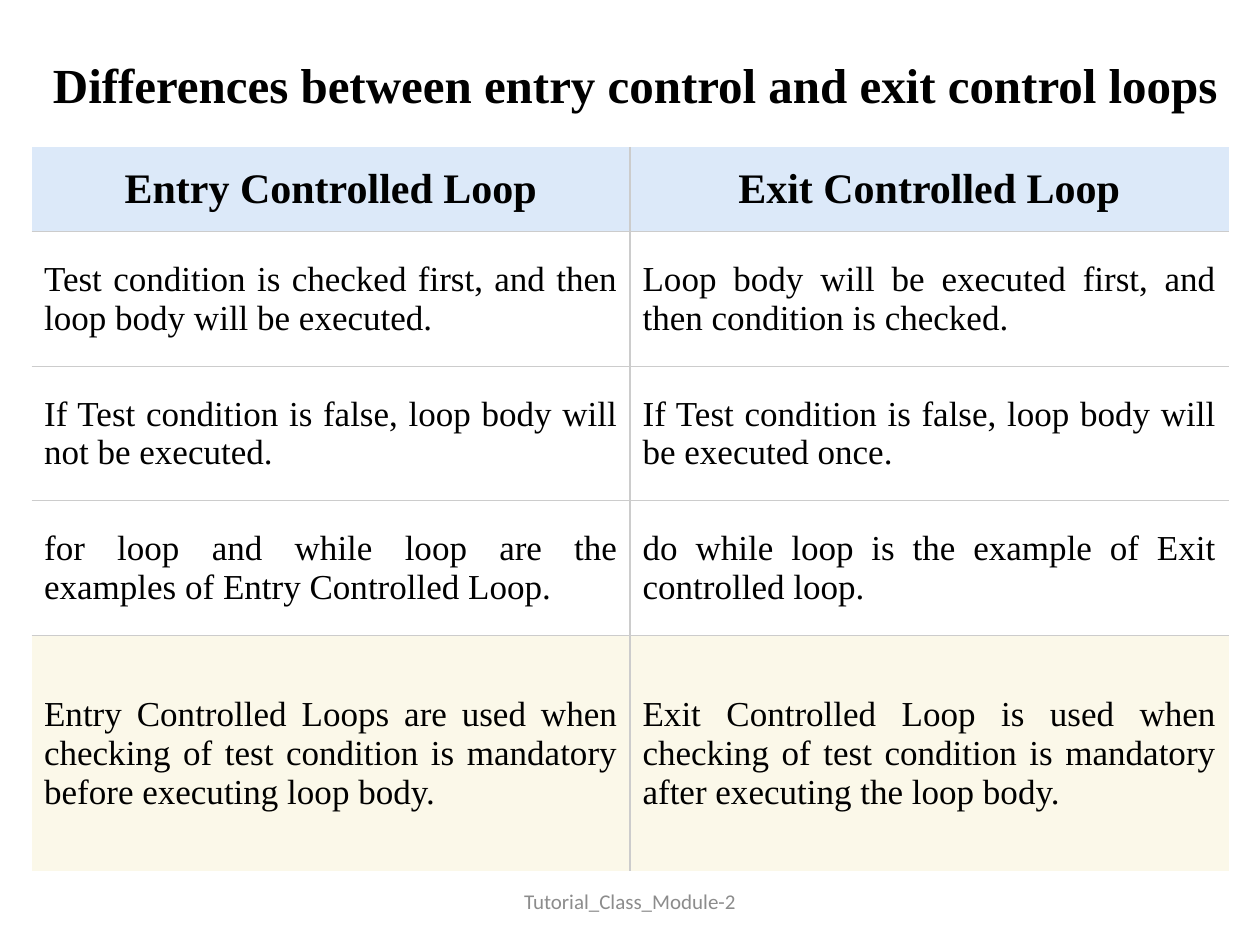
from dataclasses import dataclass

from lxml import etree
from pptx import Presentation
from pptx.dml.color import RGBColor
from pptx.enum.text import MSO_ANCHOR, PP_ALIGN
from pptx.oxml.ns import qn
from pptx.util import Pt

CENTER, JUSTIFY = PP_ALIGN.CENTER, PP_ALIGN.JUSTIFY
MIDDLE = MSO_ANCHOR.MIDDLE


@dataclass(frozen=True)
class Theme:
    ink: str = "000000"
    muted: str = "8C8C8C"
    rule: str = "CCCCCC"
    header_fill: str = "DCE9F9"
    body_fill: str = "FFFFFF"
    closing_fill: str = "FBF8E9"
    serif: str = "Times New Roman"
    sans: str = "Calibri"
    title_size: float = 28
    header_size: float = 24
    body_size: float = 20
    footer_size: float = 12
    rule_width: float = 0.75


@dataclass(frozen=True)
class TextStyle:
    size: float
    font: str
    color: str
    bold: bool = False
    align: PP_ALIGN = CENTER


@dataclass(frozen=True)
class Box:
    left: float
    top: float
    width: float
    height: float

    def lengths(self) -> tuple:
        return Pt(self.left), Pt(self.top), Pt(self.width), Pt(self.height)


@dataclass(frozen=True)
class ComparisonRow:
    entry: str
    exit: str
    height: float
    fill: str
    style: TextStyle


THEME = Theme()
TITLE = TextStyle(THEME.title_size, THEME.serif, THEME.ink, bold=True)
HEADER = TextStyle(THEME.header_size, THEME.serif, THEME.ink, bold=True)
BODY = TextStyle(THEME.body_size, THEME.serif, THEME.ink, align=JUSTIFY)
FOOTER = TextStyle(THEME.footer_size, THEME.sans, THEME.muted)

TABLE_BOX = Box(18, 84, 684, 414)
CELL_MARGIN = 7.2
HEADER_HEIGHT, BODY_HEIGHT, CLOSING_HEIGHT = 48.24, 77.04, 134.64

ROWS = [
    ComparisonRow("Entry Controlled Loop", "Exit Controlled Loop",
                  HEADER_HEIGHT, THEME.header_fill, HEADER),
    ComparisonRow("Test condition is checked first, and then loop body will be executed.",
                  "Loop body will be executed first, and then condition is checked.",
                  BODY_HEIGHT, THEME.body_fill, BODY),
    ComparisonRow("If Test condition is false, loop body will not be executed.",
                  "If Test condition is false, loop body will be executed once.",
                  BODY_HEIGHT, THEME.body_fill, BODY),
    ComparisonRow("for loop and while loop are the examples of Entry Controlled Loop.",
                  "do while loop is the example of Exit controlled loop.",
                  BODY_HEIGHT, THEME.body_fill, BODY),
    ComparisonRow("Entry Controlled Loops are used when checking of test condition "
                  "is mandatory before executing loop body.",
                  "Exit Controlled Loop is used when checking of test condition "
                  "is mandatory after executing the loop body.",
                  CLOSING_HEIGHT, THEME.closing_fill, BODY),
]


def write_text(frame, text: str, style: TextStyle) -> None:
    paragraph = frame.paragraphs[0]
    paragraph.alignment = style.align
    run = paragraph.add_run()
    run.text = text
    font_format = {"size": Pt(style.size), "name": style.font, "bold": style.bold}
    for attribute, value in font_format.items():
        setattr(run.font, attribute, value)
    run.font.color.rgb = RGBColor.from_string(style.color)


def add_label(slide, box: Box, text: str, style: TextStyle) -> None:
    frame = slide.shapes.add_textbox(*box.lengths()).text_frame
    frame.word_wrap = True
    frame.vertical_anchor = MIDDLE
    write_text(frame, text, style)


def set_borders(cell, visible: dict[str, bool]) -> None:
    """Rule the visible sides; call before filling to keep the XML order."""
    properties = cell._tc.get_or_add_tcPr()
    for side, shown in visible.items():
        line = etree.SubElement(properties, qn(f"a:ln{side}"),
                                w=str(int(Pt(THEME.rule_width))))
        if shown:
            fill = etree.SubElement(line, qn("a:solidFill"))
            etree.SubElement(fill, qn("a:srgbClr"), val=THEME.rule)
        else:
            etree.SubElement(line, qn("a:noFill"))


def add_comparison(slide, box: Box, rows: list[ComparisonRow]) -> None:
    table = slide.shapes.add_table(len(rows), 2, *box.lengths()).table
    table.first_row = table.horz_banding = False
    for column in table.columns:
        column.width = Pt(box.width / 2)

    cell_format = {f"margin_{side}": Pt(CELL_MARGIN)
                   for side in ("left", "right", "top", "bottom")}
    cell_format["vertical_anchor"] = MIDDLE

    for row_index, row in enumerate(rows):
        table.rows[row_index].height = Pt(row.height)
        for column_index, text in enumerate((row.entry, row.exit)):
            cell = table.cell(row_index, column_index)
            for attribute, value in cell_format.items():
                setattr(cell, attribute, value)
            # Only the inner edges of the grid are ruled
            set_borders(cell, {"L": column_index == 1, "R": column_index == 0,
                               "T": row_index > 0, "B": row_index < len(rows) - 1})
            cell.fill.solid()
            cell.fill.fore_color.rgb = RGBColor.from_string(row.fill)
            write_text(cell.text_frame, text, row.style)


def main() -> None:
    presentation = Presentation()
    presentation.slide_width, presentation.slide_height = Pt(720), Pt(540)
    slide = presentation.slides.add_slide(presentation.slide_layouts[6])

    # Title
    add_label(slide, Box(12, 23, 702, 50.4),
              "Differences between entry control and exit control loops", TITLE)
    # Comparison table
    add_comparison(slide, TABLE_BOX, ROWS)
    # Footer
    add_label(slide, Box(246, 500.5, 228, 28.8), "Tutorial_Class_Module-2", FOOTER)

    presentation.save("out.pptx")


if __name__ == "__main__":
    main()
